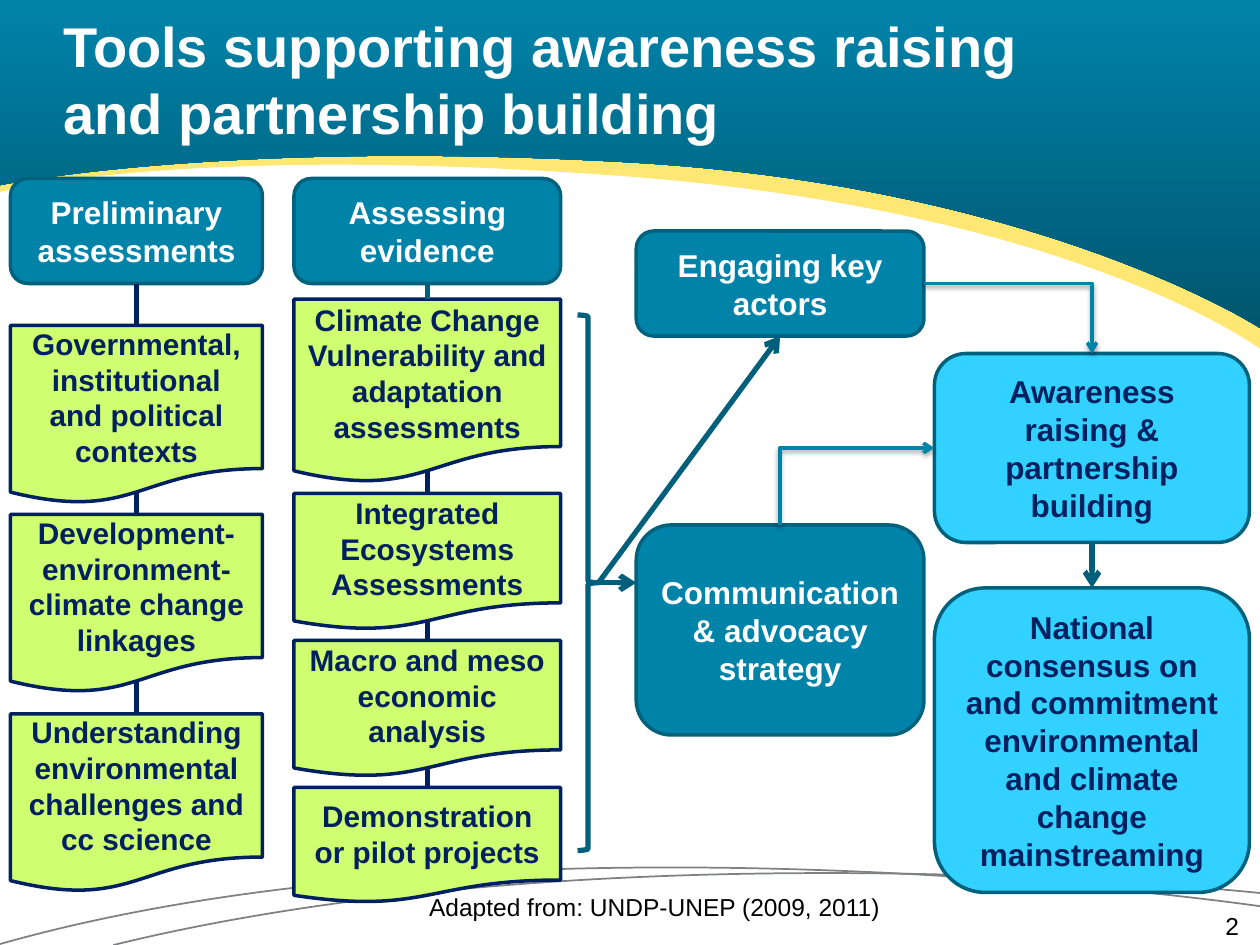
from lxml.etree import SubElement as Sub
from pptx import Presentation
from pptx.dml.color import RGBColor as RGB
from pptx.enum.shapes import MSO_CONNECTOR as Conn, MSO_SHAPE as Shape
from pptx.enum.text import MSO_ANCHOR as Anchor, PP_ALIGN as Align
from pptx.oxml import parse_xml
from pptx.oxml.ns import nsdecls, qn
from pptx.util import Inches, Pt

WIDE, HIGH = 10, 7.5
COLS = 120  # square grid: 120 columns by 90 rows
HUES = {
    "teal": "0083A9", "deep": "00566F", "edge": "00617D", "line": "005F7B",
    "navy": "002060", "lime": "CFFF70", "sky": "32D1FF", "gold": "FFE774",
    "grey": "7E8083", "white": "FFFFFF", "black": "000000",
}
HEAD = {"size": Pt(18), "bold": True, "name": "Arial"}
NOTE = {"size": Pt(17), "bold": True, "name": "Arial"}
TITLE = {"size": Pt(32), "bold": True, "name": "Arial"}
SMALL = {"size": Pt(14), "bold": False, "name": "Arial"}
DOC_END = 0.934  # height share where a document's wave meets its middle
GLOW = ('<a:outerShdw blurRad="39400" dist="20300" dir="5400000" rotWithShape="0">'
        '<a:srgbClr val="000000"><a:alpha val="38000"/></a:srgbClr></a:outerShdw>')


def grid(*cells):
    return [Inches(c * WIDE / COLS) for c in cells]


def hue(name):
    return RGB.from_string(HUES[name])


def write(frame, text, form, tint, align, anchor=Anchor.MIDDLE):
    frame.word_wrap = True
    frame.vertical_anchor = anchor
    frame.text = text
    par = frame.paragraphs[0]
    par.alignment = align
    for run in par.runs:
        for key, val in form.items():
            setattr(run.font, key, val)
        run.font.color.rgb = hue(tint)


def label(slide, cells, text, form, tint, align, anchor=Anchor.TOP, flush=True):
    frame = slide.shapes.add_textbox(*grid(*cells)).text_frame
    if flush:
        for side in ("left", "top", "right", "bottom"):
            setattr(frame, f"margin_{side}", 0)
    write(frame, text, form, tint, align, anchor)


def box(slide, kind, cells, text, fill, edge, form, tint):
    item = slide.shapes.add_shape(kind, *grid(*cells))
    item.shadow.inherit = False
    item.fill.solid()
    item.fill.fore_color.rgb = hue(fill)
    item.line.color.rgb = hue(edge)
    item.line.width = Pt(2)
    write(item.text_frame, text, form, tint, Align.CENTER)
    return item


def card(slide, cells, text, fill="teal", tint="white"):
    return box(slide, Shape.ROUNDED_RECTANGLE, cells, text, fill, "edge", HEAD, tint)


def doc(slide, cells, text):
    return box(slide, Shape.FLOWCHART_DOCUMENT, cells, text, "lime", "navy", NOTE, "navy")


def wire(slide, start, end, tint="line", width=3, kind=Conn.STRAIGHT, tip=True, glow=""):
    item = slide.shapes.add_connector(kind, *grid(*start, *end))
    item.line.color.rgb = hue(tint)
    item.line.width = Pt(width)
    if tip:
        stroke = item.line._get_or_add_ln()
        stroke.append(parse_xml(f'<a:tailEnd {nsdecls("a")} type="arrow"/>'))
    item._element.spPr.append(
        parse_xml(f'<a:effectLst {nsdecls("a")}>{glow}</a:effectLst>'))
    return item


def link(slide, top, low, tint="navy", tip=False):
    """Join the foot of one box to the head of the next."""
    item = wire(slide, (0, 0), (0, 0), tint, tip=tip)
    item.begin_connect(top, 2)
    item.end_connect(low, 0)
    if top.auto_shape_type == Shape.FLOWCHART_DOCUMENT:
        item.begin_y = top.top + int(top.height * DOC_END)


def bend(slide, start, end, turn=0):
    """One-corner arrow; start and end are those before the turn."""
    item = wire(slide, start, end, "teal", 2, Conn.ELBOW, glow=GLOW)
    props = item._element.spPr
    props.find(qn("a:prstGeom")).set("prst", "bentConnector2")
    if turn:
        props.find(qn("a:xfrm")).set("rot", str(turn * 60000))


def trace(slide, points, curves, close=False):
    """Outline in percent of the slide; its first legs, in threes, become curves."""
    spots = [(Inches(x * WIDE / 100), Inches(y * HIGH / 100)) for x, y in points]
    pen = slide.shapes.build_freeform(*spots[0])
    pen.add_line_segments(spots[1:], close=close)
    item = pen.convert_to_shape()
    item.shadow.inherit = False
    legs = list(item._element.iter(qn("a:lnTo")))
    for i in range(0, 3 * curves, 3):
        trio = legs[i:i + 3]
        cubic = Sub(trio[0].getparent(), qn("a:cubicBezTo"))
        trio[0].addprevious(cubic)
        for leg in trio:
            cubic.append(leg[0])
            leg.getparent().remove(leg)
    return item


def arc(slide, right, pull, left):
    item = trace(slide, [right, right, pull, left], 1)
    item.fill.background()
    item.line.color.rgb = hue("grey")
    item.line.width = Pt(1)


def band(slide, right, pull, mid, lift, left):
    points = [right, right, pull, mid, lift, left, left, (0, -0.1), (100, -0.1)]
    item = trace(slide, points, 2, True)
    item.line.fill.background()
    return item


def scene(slide):
    # Foot arcs and head bands
    arc(slide, (100, 94.5), (48.5, 87.1), (9, 100))
    arc(slide, (100, 95.9), (41, 84.4), (0, 99.9))
    gold = band(slide, (100, 36.9), (85.4, 22.4), (50.1, 18.7), (14.7, 15.1), (0, 20.3))
    gold.fill.solid()
    gold.fill.fore_color.rgb = hue("gold")
    teal = band(slide, (100, 34.7), (82.6, 19.7), (50.1, 17.2), (17.5, 14.7), (0, 19.6))
    teal.fill.gradient()
    teal.fill.gradient_angle = 270
    for stop, name, spot in zip(teal.fill.gradient_stops, ("teal", "deep"), (0, 1)):
        stop.color.rgb = hue(name)
        stop.position = spot


def main():
    deck = Presentation()
    deck.slide_width, deck.slide_height = Inches(WIDE), Inches(HIGH)
    slide = deck.slides.add_slide(deck.slide_layouts[6])
    scene(slide)
    label(slide, (6, 0, 112, 15), "Tools supporting awareness raising \vand partnership building",
          TITLE, "white", Align.LEFT, Anchor.MIDDLE)
    label(slide, (90, 86.8, 28, 2.2), "2", SMALL, "black", Align.RIGHT)

    # First column
    prior = card(slide, (1, 17, 24, 10), "Preliminary assessments")
    steps = [doc(slide, (1, row, 24, 17), text) for row, text in (
        (31, "Governmental, institutional and political contexts"),
        (49, "Development-environment-climate change linkages"),
        (68, "Understanding environmental challenges and cc science"))]
    for top, low in zip([prior, *steps], steps):
        link(slide, top, low)

    # Second column; the middle box lies over the long link
    proof = card(slide, (28, 17, 25.4, 10), "Assessing evidence")
    risk, macro, pilot = [doc(slide, (28, row, 25.4, tall), text) for row, tall, text in (
        (28.5, 17.5, "Climate Change Vulnerability and adaptation assessments"),
        (61, 13, "Macro and meso economic analysis"),
        (75, 11, "Demonstration or pilot projects"))]
    link(slide, proof, risk, "line")
    link(slide, risk, macro)
    link(slide, macro, pilot)
    doc(slide, (28, 47, 25.4, 13), "Integrated Ecosystems Assessments")

    # Actors, strategy and outcomes
    actors = card(slide, (60.6, 22, 27.4, 10), "Engaging key actors")
    card(slide, (60.6, 50, 27.4, 20), "Communication & advocacy strategy")
    aware = card(slide, (89, 33.67, 30, 18), "Awareness raising & partnership building",
                 "sky", "navy")
    accord = card(slide, (89, 56, 30, 29), "National consensus on and commitment "
                  "environmental and climate change mainstreaming", "sky", "navy")

    # Brace and arrows
    brace = slide.shapes.add_shape(Shape.RIGHT_BRACE, *grid(55, 30, 2, 51))
    brace.shadow.inherit = False
    brace.fill.background()
    brace.line.color.rgb = hue("line")
    brace.line.width = Pt(3)
    wire(slide, (57, 55.5), (60.6, 55.5))
    wire(slide, (57, 55.5), (74.3, 32)).end_connect(actors, 2)
    link(slide, aware, accord, "line", tip=True)
    bend(slide, (88, 27), (104, 33.67))
    bend(slide, (85.3, 53.68), (77.97, 38.98), 90)

    label(slide, (33, 84.4, 52, 4), "Adapted from: UNDP-UNEP (2009, 2011)",
          SMALL, "black", Align.RIGHT, flush=False)
    deck.save("out.pptx")


if __name__ == "__main__":
    main()
